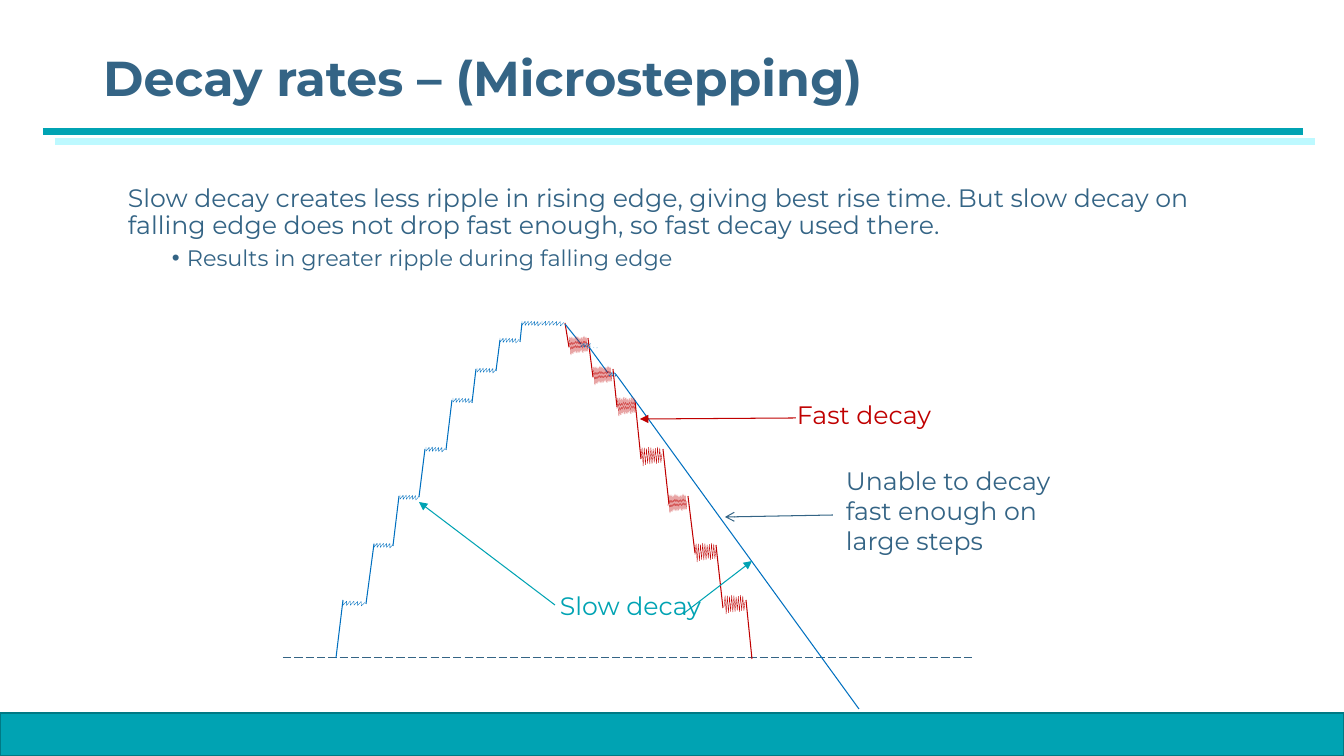
from lxml import etree
from pptx import Presentation
from pptx.dml.color import RGBColor
from pptx.enum.dml import MSO_LINE
from pptx.enum.shapes import MSO_CONNECTOR, MSO_SHAPE
from pptx.enum.text import MSO_ANCHOR, MSO_AUTO_SIZE, PP_ALIGN
from pptx.oxml.ns import qn
from pptx.util import Pt

RECT, STRAIGHT = MSO_SHAPE.RECTANGLE, MSO_CONNECTOR.STRAIGHT
MIDDLE, LEFT = MSO_ANCHOR.MIDDLE, PP_ALIGN.LEFT
FIT, NO_FIT = MSO_AUTO_SIZE.SHAPE_TO_FIT_TEXT, MSO_AUTO_SIZE.NONE
LONG_DASH = MSO_LINE.LONG_DASH
PX = 914400 / 100.8
FONT = "Montserrat"
NAVY, TEAL, BLUE, RED = "346485", "00A3B3", "0070C0", "C00000"
rgb = RGBColor.from_string


def px(*lengths):
    return [round(v * PX) for v in lengths]


def add_line(x1, y1, x2, y2, color, width=0.75, head=None):
    c = slide.shapes.add_connector(STRAIGHT, *px(x1, y1, x2, y2))
    c.line.color.rgb = rgb(color)
    c.line.width = Pt(width)
    if head:
        etree.SubElement(c.line._get_or_add_ln(), qn("a:tailEnd"), type=head)
    etree.SubElement(c._element.spPr, qn("a:effectLst"))
    return c


prs = Presentation()
prs.slide_width, prs.slide_height = px(1344, 756)
slide = prs.slides.add_slide(prs.slide_layouts[5])

# Footer bar and title rule with its offset shadow
bar = slide.shapes.add_shape(RECT, *px(0, 713, 1344, 43))
bar.shadow.inherit = False
bar.fill.solid()
bar.fill.fore_color.rgb = rgb(TEAL)
bar.line.color.rgb = rgb("007984")
bar.line.width = Pt(1)

rule = add_line(43, 132, 1303, 132, TEAL, 5)
effects = rule._element.spPr.find(qn("a:effectLst"))
shadow = etree.SubElement(effects, qn("a:outerShdw"), blurRad="0",
                          dist=str(Pt(11)), dir=str(40 * 60000),
                          algn="tl", rotWithShape="0")
etree.SubElement(shadow, qn("a:srgbClr"), val="BDF9FF")

# Title
title = slide.shapes.title
title.left, title.top, title.width, title.height = px(93, 40, 1159, 82)
tf = title.text_frame
tf.auto_size = NO_FIT
tf.vertical_anchor = MIDDLE
p = tf.paragraphs[0]
p.alignment = LEFT
p.line_spacing = 0.9
r = p.add_run()
r.text = "Decay rates – (Microstepping)"
r.font.name, r.font.size, r.font.bold = FONT, Pt(35), True
r.font.color.rgb = rgb(NAVY)

# Explanation with one bullet
body = slide.shapes.add_textbox(*px(118, 162, 1097, 133))
tf = body.text_frame
tf.word_wrap = True
tf.vertical_anchor = MIDDLE
explanation = [
    ("Slow decay creates less ripple in rising edge, giving best rise time. "
     "But slow decay on falling edge does not drop fast enough, so fast decay "
     "used there.", 18),
    ("Results in greater ripple during falling edge", 16),
]
for level, (text, size) in enumerate(explanation):
    p = tf.add_paragraph() if level else tf.paragraphs[0]
    p.level = level
    p.line_spacing = 0.9
    if level:
        p.space_before = Pt(5)
        pPr = p._p.get_or_add_pPr()
        margin, hang = px(59, 15)
        pPr.set("marL", str(margin))
        pPr.set("indent", str(-hang))
        etree.SubElement(pPr, qn("a:buFont"), typeface="Arial")
        etree.SubElement(pPr, qn("a:buChar"), char="•")
    r = p.add_run()
    r.text = text
    r.font.name, r.font.size = FONT, Pt(size)
    r.font.color.rgb = rgb(NAVY)

# Zero-current axis
axis = add_line(283, 658, 973, 658, NAVY)
axis.line.dash_style = LONG_DASH

# Rising and falling step edges
rising_edges = [
    (336, 658, 343, 600), (366, 604, 374, 544), (393, 546, 399, 496),
    (419, 497, 425, 449), (446, 450, 452, 400), (472, 403, 476, 369),
    (496, 371, 500, 340), (520, 342, 522, 323),
]
falling_edges = [
    (565, 323, 569, 347), (588, 338, 593, 377), (613, 369, 617, 407),
    (635, 400, 641, 459), (663, 449, 669, 504), (688, 496, 695, 553),
    (716, 545, 723, 608), (746, 600, 752, 659),
]
slow_falls = [(565, 324, 581, 344), (589, 347, 608, 373), (615, 373, 859, 709)]
for edges, color in ((rising_edges, BLUE), (falling_edges, RED), (slow_falls, BLUE)):
    for edge in edges:
        add_line(*edge, color)

# Ripple on each step: left, top, width; profiles are (x, y) in percent
fast_heights = [63, 4, 100, 4, 94, 8, 87, 1, 90, 4, 88, 10, 82, 7, 88, 1, 83, 6, 82, 35]
fast_profile = [(100 * i / 19, y) for i, y in enumerate(fast_heights)]
slow_heights = [0, 85, 5, 90, 0, 88, 5, 85, 10, 90, 10, 100, 30]
slow_profile = [(100 * (i // 2) / 6, y) for i, y in enumerate(slow_heights)]
fast_ripples = [
    (569, 336, 19), (593, 366, 19), (617, 397, 19), (641, 447, 21),
    (668, 494, 19), (695, 543, 21), (724, 595, 21),
]
slow_ripples = [
    (343, 601, 22), (374, 543, 19), (400, 495, 19), (426, 447, 19),
    (453, 398, 19), (477, 368, 19), (500, 338, 19), (522, 321, 19),
    (542, 321, 22), (581, 343, 19), (609, 372, 19),
]
for ripples, profile, height, color in ((fast_ripples, fast_profile, 19, RED),
                                        (slow_ripples, slow_profile, 5, BLUE)):
    for left, top, width in ripples:
        points = [px(left + width * x / 100, top + height * y / 100)
                  for x, y in profile]
        builder = slide.shapes.build_freeform(*points[0], scale=1.0)
        builder.add_line_segments(points[1:], close=False)
        sp = builder.convert_to_shape()
        sp.shadow.inherit = False
        sp.fill.background()
        sp.line.color.rgb = rgb(color)
        sp.line.width = Pt(0.25)

# White patches beside the falling curve
for left, top, angle in ((619, 360, 318.4), (591, 324, 3.3)):
    sp = slide.shapes.add_shape(RECT, *px(left, top, 26, 24))
    sp.rotation = angle
    sp.shadow.inherit = False
    sp.fill.solid()
    sp.fill.fore_color.rgb = rgb("FFFFFF")
    sp.line.fill.background()

# Labels: text, box, colour, wrap, inset
labels = [
    ("Fast decay", (792, 394, 146, 40), RED, False, 5),
    ("Slow decay", (555, 585, 153, 40), TEAL, False, 5),
    ("Unable to decay fast enough on large steps", (836, 460, 249, 102), NAVY, True, 10),
]
boxes = {}
for text, box, color, wrap, inset in labels:
    sp = boxes[text] = slide.shapes.add_textbox(*px(*box))
    tf = sp.text_frame
    tf.word_wrap = wrap
    tf.auto_size = FIT
    tf.margin_left, tf.margin_right, tf.margin_top, tf.margin_bottom = px(inset, inset, 5, 5)
    r = tf.paragraphs[0].add_run()
    r.text = text
    r.font.name, r.font.size = FONT, Pt(18)
    r.font.color.rgb = rgb(color)

# Pointers from the labels to the curves
add_line(796, 418, 640, 419, RED, head="triangle")
to_rise = add_line(555, 605, 419, 502, TEAL, head="triangle")
to_rise.begin_connect(boxes["Slow decay"], 1)
add_line(683, 614, 752, 561, TEAL, head="triangle")
add_line(833, 515, 725, 517, NAVY, head="arrow")

prs.save("out.pptx")
